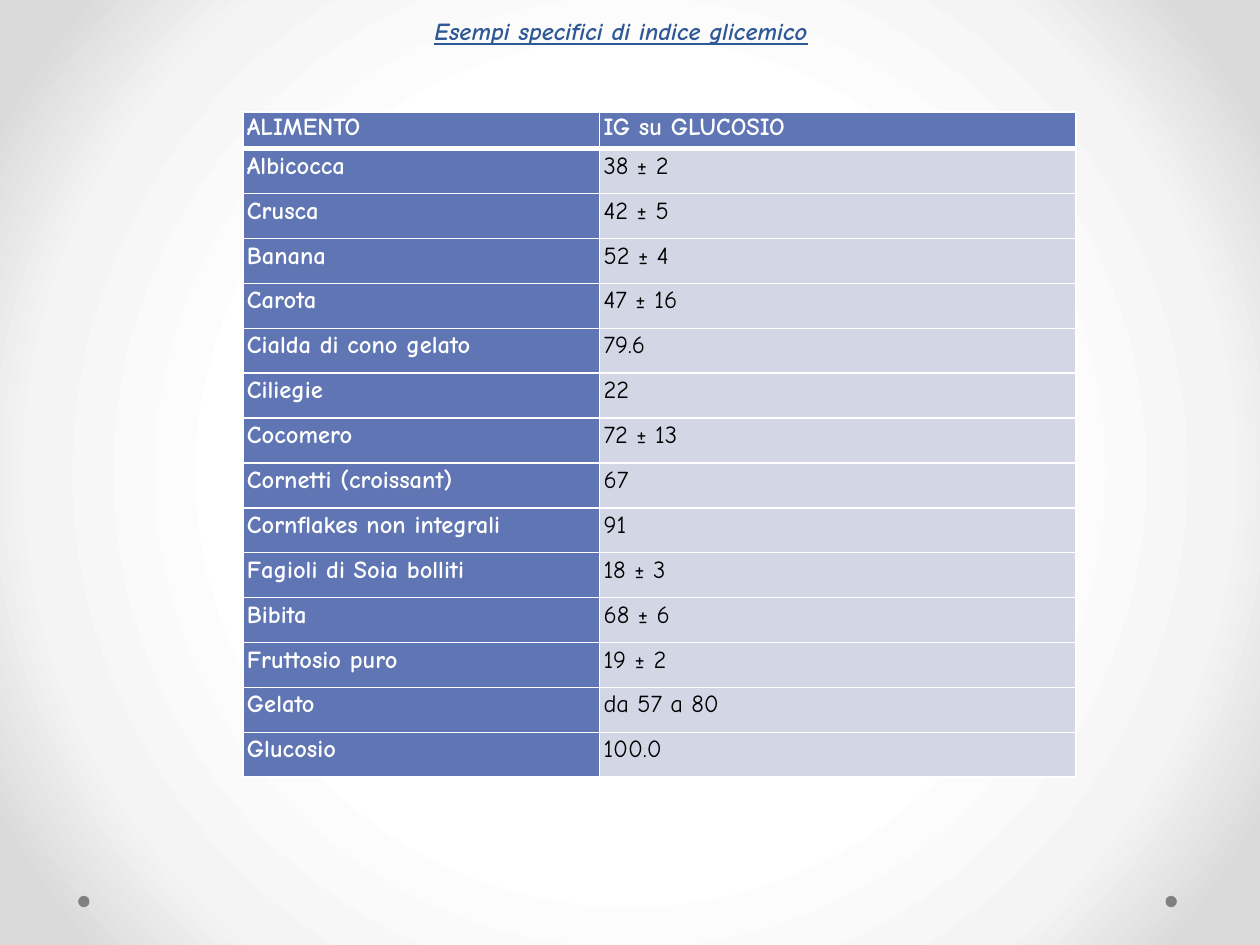
from pptx import Presentation
from pptx.dml.color import RGBColor
from pptx.enum.shapes import MSO_SHAPE as SHAPE
from pptx.enum.text import MSO_ANCHOR as ANCHOR, MSO_AUTO_SIZE as AUTO_SIZE, PP_ALIGN as ALIGN
from pptx.oxml import parse_xml
from pptx.oxml.ns import nsdecls
from pptx.util import Inches, Pt

FONT = "Comic Neue"
COLORS = {
    "title": "2F5897",
    "label": "6076B4",
    "value": "D2D6E5",
    "white": "FFFFFF",
    "black": "000000",
    "dot": "808080",
}
BACKGROUND_STOPS = [(50, "FFFFFF"), (76, "F4F4F4"), (92, "DADADA")]
ROWS = [
    ("ALIMENTO", "IG su GLUCOSIO"),
    ("Albicocca", "38 ± 2"),
    ("Crusca", "42 ± 5"),
    ("Banana", "52 ± 4"),
    ("Carota", "47 ± 16"),
    ("Cialda di cono gelato", "79.6"),
    ("Ciliegie", "22"),
    ("Cocomero", "72 ± 13"),
    ("Cornetti (croissant)", "67"),
    ("Cornflakes non integrali", "91"),
    ("Fagioli di Soia bolliti", "18 ± 3"),
    ("Bibita", "68 ± 6"),
    ("Fruttosio puro", "19 ± 2"),
    ("Gelato", "da 57 a 80"),
    ("Glucosio", "100.0"),
]
COLUMN_WIDTHS = [2.83, 3.78]
TABLE_HEIGHT, HEADER_HEIGHT = 5.28, 0.29


def rgb(name):
    return RGBColor.from_string(COLORS[name])


def set_background(s):
    stops = "".join(
        f'<a:gs pos="{pos * 1000}"><a:srgbClr val="{color}"/></a:gs>'
        for pos, color in BACKGROUND_STOPS
    )
    s.element.cSld.insert(0, parse_xml(
        f'<p:bg {nsdecls("p", "a")}><p:bgPr><a:gradFill rotWithShape="1">'
        f'<a:gsLst>{stops}</a:gsLst><a:path path="circle">'
        '<a:fillToRect l="50000" t="50000" r="50000" b="50000"/></a:path>'
        '</a:gradFill><a:effectLst/></p:bgPr></p:bg>'
    ))


def add_dot(s, left):
    dot = s.shapes.add_shape(SHAPE.OVAL, Inches(left), Inches(7.11), Inches(0.09), Inches(0.09))
    dot.shadow.inherit = False
    dot.fill.solid()
    dot.fill.fore_color.rgb = rgb("dot")
    dot.line.fill.background()


def style_font(p, color, bold):
    p.font.name = FONT
    p.font.size = Pt(14)
    p.font.bold = bold
    p.font.color.rgb = rgb(color)


def set_title(s, text):
    title = s.shapes.title
    title.left, title.top = Inches(0.43), Inches(0.01)
    title.width, title.height = Inches(9), Inches(0.47)
    tf = title.text_frame
    tf.text = text
    tf.auto_size = AUTO_SIZE.NONE
    tf.vertical_anchor = ANCHOR.MIDDLE
    p = tf.paragraphs[0]
    p.alignment = ALIGN.CENTER
    style_font(p, "title", True)
    p.font.italic = p.font.underline = True


def set_borders(cell, top, bottom):
    tc_pr = cell._tc.get_or_add_tcPr()
    sides = [("lnL", 1), ("lnR", 1), ("lnT", top), ("lnB", bottom)]
    for i, (side, width) in enumerate(sides):
        tc_pr.insert(i, parse_xml(
            f'<a:{side} {nsdecls("a")} w="{Pt(width)}"><a:solidFill>'
            f'<a:srgbClr val="{COLORS["white"]}"/></a:solidFill></a:{side}>'
        ))


def fill_cell(cell, text, row, col):
    header = row == 0
    label = header or col == 0
    cell.text = text
    cell.vertical_anchor = ANCHOR.MIDDLE
    cell.margin_left = cell.margin_right = Inches(0.03)
    cell.margin_top = Inches(0.02 if header else 0.03)
    cell.margin_bottom = Inches(0 if header else 0.03)
    cell.fill.solid()
    cell.fill.fore_color.rgb = rgb("label" if label else "value")
    # The rule under the header is thicker than the other borders
    set_borders(cell, top=3 if row == 1 else 1, bottom=3 if header else 1)
    p = cell.text_frame.paragraphs[0]
    p.line_spacing = Pt(11.2 if header else 10.5)
    if header:
        p.space_before = Pt(11.2)
    style_font(p, "white" if label else "black", label)


def add_index_table(s):
    frame = s.shapes.add_table(
        len(ROWS), len(COLUMN_WIDTHS), Inches(1.93), Inches(0.89),
        Inches(sum(COLUMN_WIDTHS)), Inches(TABLE_HEIGHT),
    )
    table = frame.table
    for column, width in zip(table.columns, COLUMN_WIDTHS):
        column.width = Inches(width)
    body_height = (TABLE_HEIGHT - HEADER_HEIGHT) / (len(ROWS) - 1)
    for i, values in enumerate(ROWS):
        table.rows[i].height = Inches(body_height if i else HEADER_HEIGHT)
        for j, text in enumerate(values):
            fill_cell(table.cell(i, j), text, i, j)


def main():
    prs = Presentation()
    prs.slide_width, prs.slide_height = Inches(10), Inches(7.5)
    s = prs.slides.add_slide(prs.slide_layouts[5])

    # Backdrop
    set_background(s)
    for left in (9.25, 0.62):
        add_dot(s, left)

    # Content
    set_title(s, "Esempi specifici di indice glicemico")
    add_index_table(s)
    prs.save("out.pptx")


if __name__ == "__main__":
    main()
